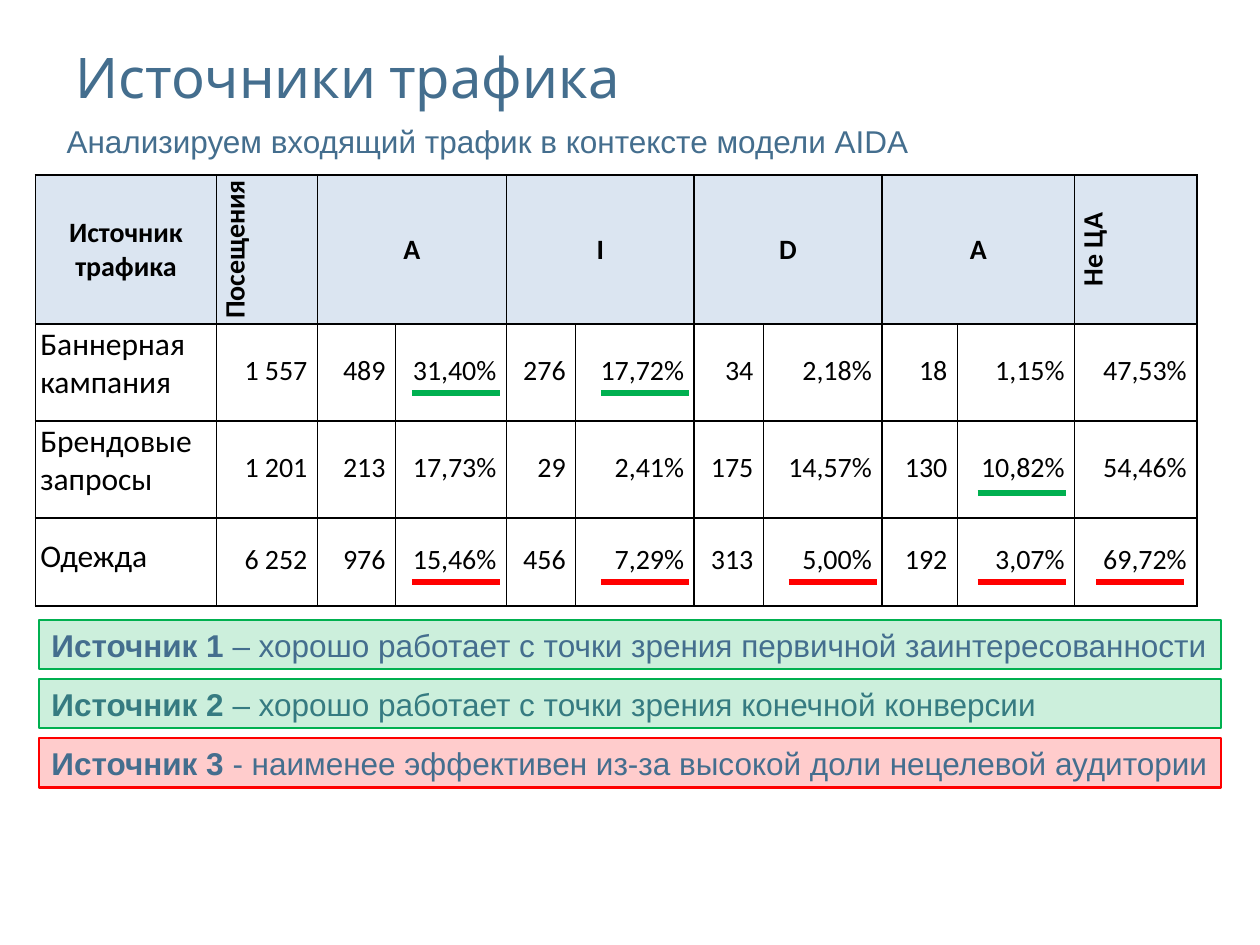
"""Build the traffic sources slide with its AIDA table and three conclusions."""
import itertools

import lxml.etree
import pptx
import pptx.dml.color
import pptx.enum.shapes
import pptx.enum.text
import pptx.oxml.ns
import pptx.util

COLORS = {"text": "446E8E", "good": "00B050", "bad": "FF0000", "head": "DBE5F1", "ink": "000000"}
RGB = {k: pptx.dml.color.RGBColor.from_string(v) for k, v in COLORS.items()}
ALIGN = pptx.enum.text.PP_ALIGN
ANCHOR = pptx.enum.text.MSO_ANCHOR
qn = pptx.oxml.ns.qn

prs = pptx.Presentation()
prs.slide_width = pptx.util.Inches(10)
prs.slide_height = pptx.util.Inches(7.5)
s = prs.slides.add_slide(prs.slide_layouts[6])


def share(*percents):
    """Turn percents of the slide width into lengths."""
    return [pptx.util.Emu(round(prs.slide_width * v / 100)) for v in percents]


def style(p, size, font, color, bold=None):
    """Set the font of a paragraph."""
    p.font.size = pptx.util.Pt(size)
    p.font.name = font
    p.font.color.rgb = RGB[color]
    p.font.bold = bold


conclusions = [
    ("Источник 1 ", "– хорошо работает с точки зрения первичной заинтересованности", "good"),
    ("Источник 2 ", "– хорошо работает с точки зрения конечной конверсии", "good"),
    ("Источник 3 ", "- наименее эффективен из-за высокой доли нецелевой аудитории", "bad"),
]
bands = []
for i, (label, claim, color) in enumerate(conclusions):
    sp = s.shapes.add_shape(pptx.enum.shapes.MSO_SHAPE.RECTANGLE, *share(3.1, 49.2 + 4.7 * i, 93.8, 3.9))
    sp.shadow.inherit = False
    sp.fill.solid()
    sp.fill.fore_color.rgb = RGB[color]
    rgb = sp.fill._xPr.find(".//" + qn("a:srgbClr"))
    lxml.etree.SubElement(rgb, qn("a:alpha"), val="20000")
    sp.line.color.rgb = RGB[color]
    sp.line.width = pptx.util.Pt(1.25)
    bands.append(sp)

headings = [
    ("Источники трафика", (5, 3, 74.9, 6.1), 32, "Cabin", True),
    ("Анализируем входящий трафик в контексте модели AIDA", (4.3, 9.2, 69.3, 4), 18, "Arial", False),
]
for text, box, size, font, is_title in headings:
    tf = s.shapes.add_textbox(*share(*box)).text_frame
    tf.word_wrap = is_title
    tf.vertical_anchor = ANCHOR.MIDDLE if is_title else ANCHOR.TOP
    tf.text = text
    style(tf.paragraphs[0], size, font, "text")

tf = s.shapes.add_textbox(*share(3.1, 49.2, 95.4, 13.5)).text_frame
tf.word_wrap = False
for i, (label, claim, color) in enumerate(conclusions):
    p = tf.add_paragraph() if i else tf.paragraphs[0]
    p.space_after = pptx.util.Pt(12)
    style(p, 18, "Arial", "text")
    for text, bold in ((label, True), (claim, False)):
        r = p.add_run()
        r.text = text
        r.font.bold = bold

bands[1]._element.getparent().append(bands[1]._element)

rows = [
    ["Источник трафика", "Посещения", "A", "", "I", "", "D", "", "A", "", "Не ЦА"],
    ["Баннерная кампания", "1 557", "489", "31,40%", "276", "17,72%", "34", "2,18%", "18", "1,15%", "47,53%"],
    ["Брендовые запросы", "1 201", "213", "17,73%", "29", "2,41%", "175", "14,57%", "130", "10,82%", "54,46%"],
    ["Одежда", "6 252", "976", "15,46%", "456", "7,29%", "313", "5,00%", "192", "3,07%", "69,72%"],
]
widths = [14.4, 8, 6.2, 8.8, 5.5, 9.4, 5.5, 9.4, 6, 9.3, 9.7]
heights = [11.8, 7.7, 7.7, 6.9]
left, top = 2.8, 13.9
table = s.shapes.add_table(4, 11, *share(left, top, sum(widths), sum(heights))).table
table.first_row = table.horz_banding = False
for col, width in zip(table.columns, share(*widths)):
    col.width = width
for row, height in zip(table.rows, share(*heights)):
    row.height = height

for i, j in itertools.product(range(4), range(11)):
    cell = table.cell(i, j)
    tcPr = cell._tc.get_or_add_tcPr()
    for side in ("a:lnL", "a:lnR", "a:lnT", "a:lnB"):
        ln = lxml.etree.SubElement(tcPr, qn(side), w=str(pptx.util.Pt(1)))
        fill = lxml.etree.SubElement(ln, qn("a:solidFill"))
        lxml.etree.SubElement(fill, qn("a:srgbClr"), val=COLORS["ink"])
    cell.text = rows[i][j]
    p = cell.text_frame.paragraphs[0]
    cell.vertical_anchor = ANCHOR.MIDDLE
    if i == 0:
        cell.fill.solid()
        cell.fill.fore_color.rgb = RGB["head"]
        margins = (0.1, 0.1, 0.1, 0)
        p.alignment = ALIGN.CENTER
        if j in (1, 10):
            tcPr.set("vert", "vert270")
    else:
        cell.fill.background()
        margins = (0, 0.1, 0.8, 0.4)
        p.alignment = ALIGN.RIGHT
        if j == 0:
            margins = (0.4, 1.6, 0.8, 2.4) if i == 3 else (0.4, 0.1, 0.8, 1.6)
            cell.vertical_anchor = ANCHOR.BOTTOM
            p.alignment = ALIGN.LEFT
    cell.margin_left, cell.margin_top, cell.margin_right, cell.margin_bottom = share(*margins)
    style(p, 18 if i and j == 0 else 16, "Calibri", "ink", i == 0)
for j in (2, 4, 6, 8):
    table.cell(0, j).merge(table.cell(0, j + 1))

gaps = {3: 0.5, 5: 0.4, 7: 0.4, 9: 0.7, 10: 1}
marks = [(31.2, "good", (3, 5)), (39.1, "good", (9,)), (46.2, "bad", (10, 9, 7, 5, 3))]
for y, color, cols in marks:
    for j in cols:
        right = left + sum(widths[:j + 1]) - gaps[j]
        line = s.shapes.add_connector(pptx.enum.shapes.MSO_CONNECTOR.STRAIGHT, *share(right - 7, y, right, y))
        line.line.color.rgb = RGB[color]
        line.line.width = pptx.util.Pt(3.5)
        lxml.etree.SubElement(line._element.spPr, qn("a:effectLst"))

prs.save("out.pptx")
